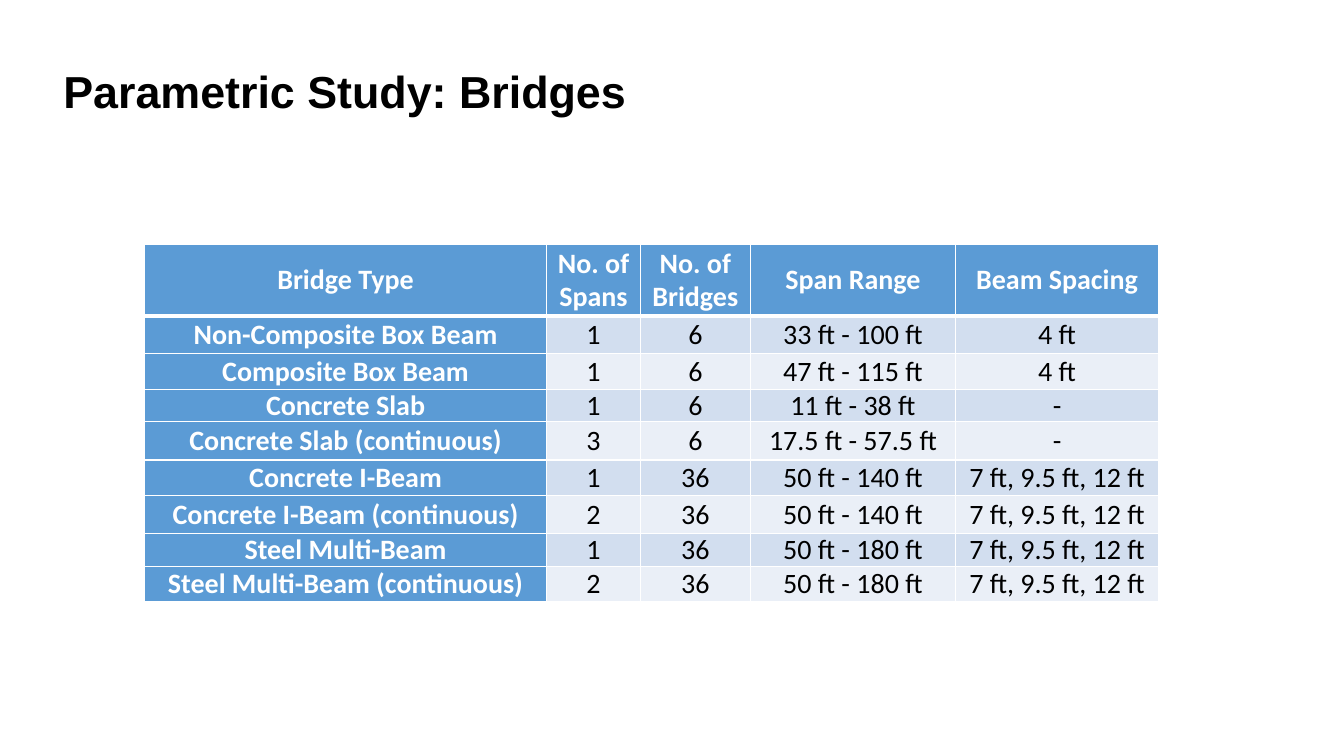
from lxml import etree
from pptx import Presentation
from pptx.dml.color import RGBColor
from pptx.enum.text import MSO_ANCHOR, PP_ALIGN
from pptx.oxml.ns import qn
from pptx.util import Pt

MIDDLE = MSO_ANCHOR.MIDDLE
LEFT, CENTER = PP_ALIGN.LEFT, PP_ALIGN.CENTER
BLUE, WHITE, BLACK = "5B9BD5", "FFFFFF", "000000"
BANDS = ("D2DEEF", "EAEFF7")
WIDTHS = (287.3, 67, 78.4, 146.9, 144.7)
HEIGHTS = (51.1, 27.2, 25.2, 23.2, 27.4, 25.2, 27.2, 23.8, 25)
BEAMS = "7 ft, 9.5 ft, 12 ft"
ROWS = (
    ("Bridge Type", "No. of Spans", "No. of Bridges", "Span Range", "Beam Spacing"),
    ("Non-Composite Box Beam", "1", "6", "33 ft - 100 ft", "4 ft"),
    ("Composite Box Beam", "1", "6", "47 ft - 115 ft", "4 ft"),
    ("Concrete Slab", "1", "6", "11 ft - 38 ft", "-"),
    ("Concrete Slab (continuous)", "3", "6", "17.5 ft - 57.5 ft", "-"),
    ("Concrete I-Beam", "1", "36", "50 ft - 140 ft", BEAMS),
    ("Concrete I-Beam (continuous)", "2", "36", "50 ft - 140 ft", BEAMS),
    ("Steel Multi-Beam", "1", "36", "50 ft - 180 ft", BEAMS),
    ("Steel Multi-Beam (continuous)", "2", "36", "50 ft - 180 ft", BEAMS),
)


def paint(code):
    """Turn a hex string into a colour."""
    return RGBColor.from_string(code)


def assign(item, values):
    """Set each attribute of an object from a dict."""
    for name, value in values.items():
        setattr(item, name, value)


def write(frame, text, color, align, spacing, font):
    """Fill a text frame with one styled paragraph."""
    para = frame.paragraphs[0]
    para.text = text
    assign(para, {"alignment": align, "line_spacing": spacing})
    style = para.runs[0].font
    assign(style, font)
    style.color.rgb = paint(color)


def edge(cell, side, width):
    """Draw a white border on one side of a cell."""
    props = cell._tc.get_or_add_tcPr()
    line = etree.SubElement(props, qn("a:ln" + side), w=str(Pt(width)))
    fill = etree.SubElement(line, qn("a:solidFill"))
    etree.SubElement(fill, qn("a:srgbClr"), val=WHITE)


def add_title(slide, left, top, width, height):
    """Place the slide title in its box."""
    frame = slide.shapes.add_textbox(
        Pt(left), Pt(top), Pt(width), Pt(height)).text_frame
    assign(frame, {"word_wrap": True, "vertical_anchor": MIDDLE})
    write(frame, "Parametric Study: Bridges", BLACK, LEFT, 0.9,
          {"name": "Arial", "size": Pt(32), "bold": True})


def add_cell(cell, text, row, col):
    """Style one cell by its row and column."""
    head = row == 0 or col == 0
    assign(cell, {"margin_left": Pt(5), "margin_right": Pt(5),
                  "margin_top": 0, "margin_bottom": 0,
                  "vertical_anchor": MIDDLE})
    for side, width in (("L", 1), ("R", 1), ("T", 3 if row == 1 else 1),
                        ("B", 3 if row == 0 else 1)):
        edge(cell, side, width)
    cell.fill.solid()
    cell.fill.fore_color.rgb = paint(BLUE if head else BANDS[(row - 1) % 2])
    write(cell.text_frame, text, WHITE if head else BLACK, CENTER, 0.95,
          {"name": "Calibri", "size": Pt(20), "bold": head})


def add_grid(slide, left, top):
    """Place the bridge table at a corner."""
    grid = slide.shapes.add_table(
        len(ROWS), len(WIDTHS), Pt(left), Pt(top),
        Pt(sum(WIDTHS)), Pt(sum(HEIGHTS))).table
    assign(grid, {"first_col": True, "horz_banding": True})
    for column, width in zip(grid.columns, WIDTHS):
        column.width = Pt(width)
    for row, (texts, height) in enumerate(zip(ROWS, HEIGHTS)):
        grid.rows[row].height = Pt(height)
        for col, text in enumerate(texts):
            add_cell(grid.cell(row, col), text, row, col)


def main():
    """Build and save the slide."""
    deck = Presentation()
    assign(deck, {"slide_width": Pt(960), "slide_height": Pt(540)})
    slide = deck.slides.add_slide(deck.slide_layouts[6])
    add_title(slide, 38.2, 48, 828, 38)
    add_grid(slide, 103.2, 174.5)
    deck.save("out.pptx")


if __name__ == "__main__":
    main()
